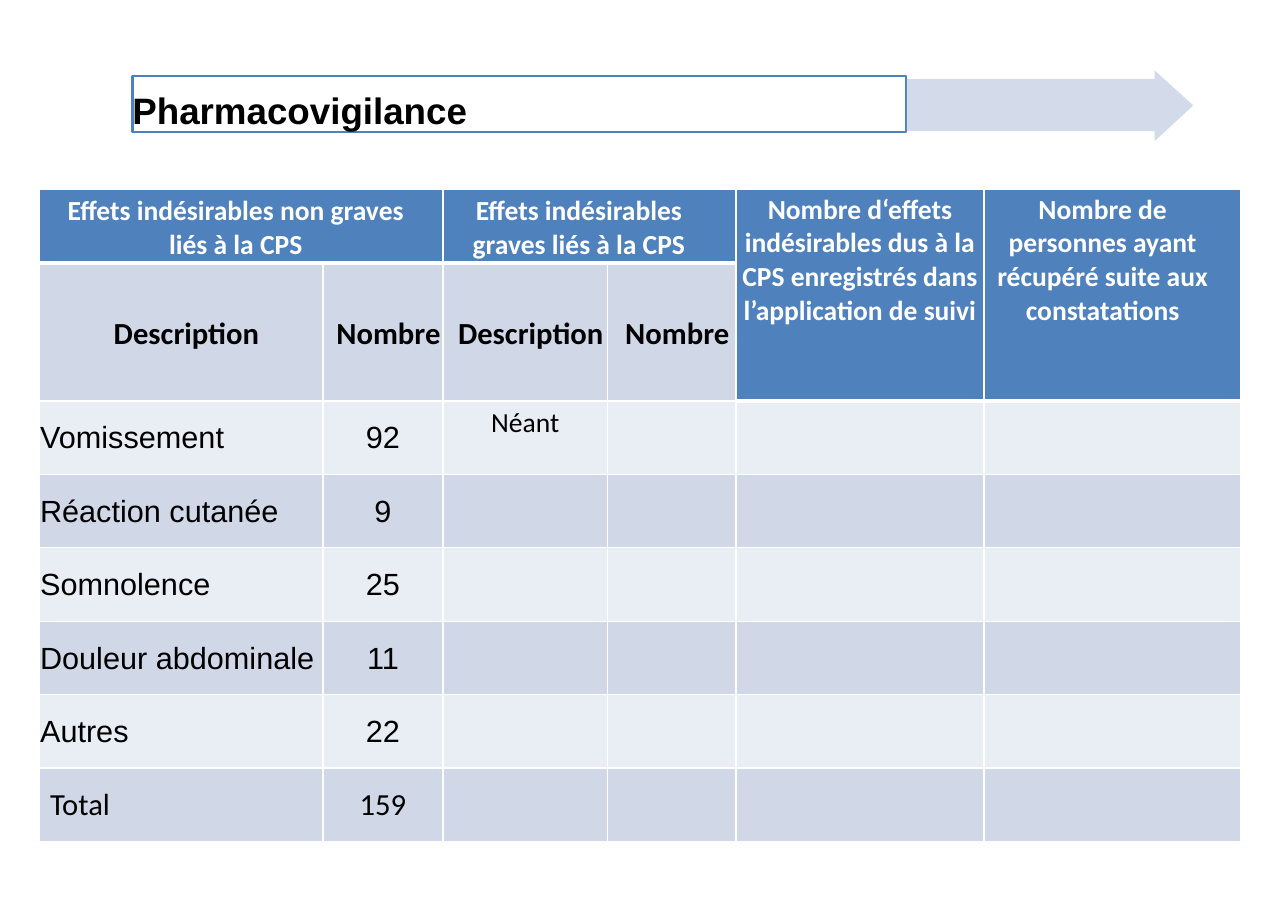
"""Build the pharmacovigilance slide: a title banner with an arrow and a table of adverse effects."""
from lxml import etree
from pptx import Presentation
from pptx.dml.color import RGBColor
from pptx.enum.text import MSO_ANCHOR, MSO_AUTO_SIZE, PP_ALIGN
from pptx.oxml.ns import qn
from pptx.util import Pt

TOP, MIDDLE, BOTTOM = MSO_ANCHOR.TOP, MSO_ANCHOR.MIDDLE, MSO_ANCHOR.BOTTOM
LEFT, CENTER = PP_ALIGN.LEFT, PP_ALIGN.CENTER
NO_AUTOFIT = MSO_AUTO_SIZE.NONE

WHITE = RGBColor(0xFF, 0xFF, 0xFF)
BLACK = RGBColor(0x00, 0x00, 0x00)
BLUE = RGBColor(0x4F, 0x81, 0xBD)
BAND_DARK = RGBColor(0xD0, 0xD8, 0xE8)
BAND_LIGHT = RGBColor(0xE9, 0xED, 0xF4)
ARROW_BLUE = RGBColor(0xCF, 0xD8, 0xE8)

TITLE = "Pharmacovigilance"
ROWS = [
    ["Effets indésirables non graves liés à la CPS", "",
     "Effets indésirables graves liés à la CPS", "",
     "Nombre d‘effets indésirables dus à la CPS enregistrés dans l’application de suivi",
     "Nombre de personnes ayant récupéré suite aux constatations"],
    ["Description", "Nombre", "Description", "Nombre", "", ""],
    ["Vomissement", "92", "Néant", "", "", ""],
    ["Réaction cutanée", "9", "", "", "", ""],
    ["Somnolence", "25", "", "", "", ""],
    ["Douleur abdominale", "11", "", "", "", ""],
    ["Autres", "22", "", "", "", ""],
    ["Total", "159", "", "", "", ""],
]
MERGES = [((0, 0), (0, 1)), ((0, 2), (0, 3)), ((0, 4), (1, 4)), ((0, 5), (1, 5))]
COLUMN_WIDTHS = [185.5, 78.5, 107.5, 84, 162, 168]
ROW_HEIGHT, SUBHEADER_HEIGHT = 48, 90
TABLE_LEFT, TABLE_TOP = 25.5, 124
HEADER_MARGINS = {0: (7.2, 14), 2: (7.2, 21), 4: (0, 0), 5: (7.2, 20)}

TITLE_BOX = {"left": 86.5, "top": 49.7, "width": 505.5, "height": 36.7}
ARROW_POINTS = [(592.6, 51.8), (754.6, 51.8), (754.6, 46.1), (779.8, 69),
                (754.6, 92.2), (754.6, 85.7), (592.6, 85.7)]

HEADER_FONT = {"name": "Calibri", "size": Pt(18), "bold": True}
SUBHEADER_FONT = {"name": "Calibri", "size": Pt(20), "bold": True}
DATA_FONT = {"name": "Arial", "size": Pt(20), "bold": False}
TOTAL_FONT = {"name": "Calibri", "size": Pt(20), "bold": False}
NOTE_FONT = {"name": "Calibri", "size": Pt(18), "bold": False}
TITLE_FONT = {"name": "Arial", "size": Pt(24), "bold": True}

HEADER_INSETS = (0, 2.2, 0, 0)
DATA_INSETS = (0.7, 0.7, 0.7, 0)
DEFAULT_INSETS = (7.2, 3.6, 7.2, 3.6)


def set_all(target, values):
    for name, value in values.items():
        setattr(target, name, value)


def set_insets(target, insets):
    names = ("margin_left", "margin_top", "margin_right", "margin_bottom")
    set_all(target, dict(zip(names, map(Pt, insets))))


def write(paragraph, text, font, color, align):
    span = paragraph.add_run()
    span.text = text
    set_all(span.font, font)
    span.font.color.rgb = color
    paragraph.alignment = align


def add_borders(cell, row, column):
    properties = cell._tc.get_or_add_tcPr()
    heavy = row == 0 or (row == 1 and column >= 4)
    for edge in ("lnL", "lnR", "lnT", "lnB"):
        if edge == "lnT" and row > 0:
            continue
        width = 3 if edge == "lnB" and heavy else 1
        line = etree.SubElement(properties, qn(f"a:{edge}"), w=str(Pt(width)))
        fill = etree.SubElement(line, qn("a:solidFill"))
        etree.SubElement(fill, qn("a:srgbClr"), val=str(WHITE))


def cell_style(row, column):
    """Return font, text colour, alignment, anchor, insets and side margins."""
    if row == 0:
        anchor = TOP if column >= 4 else MIDDLE
        return HEADER_FONT, WHITE, CENTER, anchor, HEADER_INSETS, HEADER_MARGINS[column]
    if row == 1:
        return SUBHEADER_FONT, BLACK, CENTER, MIDDLE, HEADER_INSETS, (7.2, 0)
    if column == 2:
        return NOTE_FONT, BLACK, CENTER, TOP, DEFAULT_INSETS, (0, 0)
    align = LEFT if column == 0 else CENTER
    if row == len(ROWS) - 1:
        return TOTAL_FONT, BLACK, align, MIDDLE, DEFAULT_INSETS, (0, 0)
    return DATA_FONT, BLACK, align, MIDDLE, DATA_INSETS, (0, 0)


def fill_cell(cell, text, row, column):
    add_borders(cell, row, column)
    cell.fill.solid()
    band = BAND_DARK if row % 2 else BAND_LIGHT
    in_header = row == 0 or (row == 1 and column >= 4)
    cell.fill.fore_color.rgb = BLUE if in_header else band
    if not text:
        return
    font, color, align, anchor, insets, margins = cell_style(row, column)
    cell.vertical_anchor = anchor
    set_insets(cell, insets)
    paragraph = cell.text_frame.paragraphs[0]
    write(paragraph, text, font, color, align)
    for name, margin in zip(("marL", "marR"), margins):
        paragraph._p.get_or_add_pPr().set(name, str(Pt(margin)))


def add_effects_table(page):
    heights = [SUBHEADER_HEIGHT if row == 1 else ROW_HEIGHT for row in range(len(ROWS))]
    table = page.shapes.add_table(
        len(ROWS), len(COLUMN_WIDTHS), Pt(TABLE_LEFT), Pt(TABLE_TOP),
        Pt(sum(COLUMN_WIDTHS)), Pt(sum(heights))).table
    for column, width in zip(table.columns, COLUMN_WIDTHS):
        column.width = Pt(width)
    for row, height in zip(table.rows, heights):
        row.height = Pt(height)
    for first, last in MERGES:
        table.cell(*first).merge(table.cell(*last))
    for row, texts in enumerate(ROWS):
        for column, text in enumerate(texts):
            fill_cell(table.cell(row, column), text, row, column)


def add_arrow(page):
    points = [(Pt(x), Pt(y)) for x, y in ARROW_POINTS]
    builder = page.shapes.build_freeform(*points[0], scale=1.0)
    builder.add_line_segments(points[1:], close=True)
    arrow = builder.convert_to_shape()
    arrow.shadow.inherit = False
    arrow.line.fill.background()
    arrow.fill.solid()
    arrow.fill.fore_color.rgb = ARROW_BLUE
    color = arrow._element.spPr.find(qn("a:solidFill")).find(qn("a:srgbClr"))
    etree.SubElement(color, qn("a:alpha"), val="90000")


def format_title(page):
    title = page.shapes.title
    set_all(title, {name: Pt(value) for name, value in TITLE_BOX.items()})
    outline = etree.SubElement(title._element.spPr, qn("a:prstGeom"), prst="roundRect")
    etree.SubElement(outline, qn("a:avLst"))
    title.line.color.rgb = BLUE
    title.line.width = Pt(1.5)
    frame = title.text_frame
    set_all(frame, {"word_wrap": True, "auto_size": NO_AUTOFIT, "vertical_anchor": BOTTOM})
    set_insets(frame, (0, 0, 0, 0))
    write(frame.paragraphs[0], TITLE, TITLE_FONT, BLACK, LEFT)


def main():
    deck = Presentation()
    set_all(deck, {"slide_width": Pt(841.68), "slide_height": Pt(595.44)})
    page = deck.slides.add_slide(deck.slide_layouts.get_by_name("Title Only"))
    format_title(page)
    add_effects_table(page)
    add_arrow(page)
    deck.save("out.pptx")


if __name__ == "__main__":
    main()
